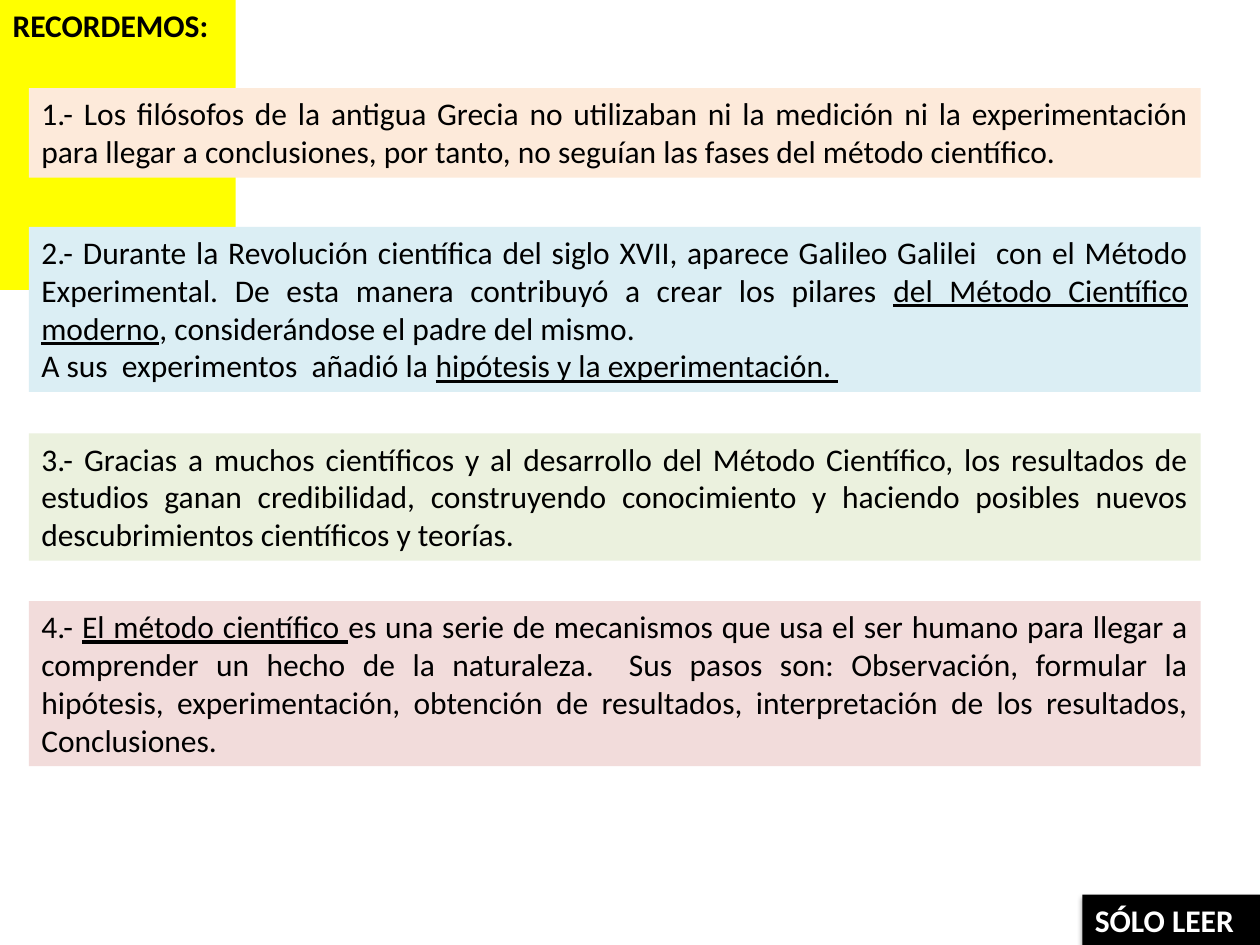
from lxml import etree
from pptx import Presentation
from pptx import util as u
from pptx.dml.color import RGBColor
from pptx.enum import shapes, text
from pptx.oxml.ns import qn

COLORS = {
    "peach": "FDEADA",
    "blue": "DBEEF4",
    "green": "EBF1DE",
    "pink": "F2DCDB",
    "yellow": "FFFF00",
    "black": "000000",
    "white": "FFFFFF",
}
UNDERLINE = "|"

POINTS = [
    (1.8 - 1.1, 0.71, "peach", [
        "1.- Los filósofos de la antigua Grecia no utilizaban ni la medición ni la "
        "experimentación para llegar a conclusiones, por tanto, no seguían las fases "
        "del método científico. "]),
    (1.8, 1.31, "blue", [
        "2.- Durante la Revolución científica del siglo XVII, aparece Galileo Galilei  "
        "con el Método Experimental. De esta manera contribuyó a crear los pilares "
        "|del Método Científico moderno|, considerándose el padre del mismo. ",
        "A sus  experimentos  añadió la |hipótesis y la experimentación. |"]),
    (3.44, 1.01, "green", [
        "3.- Gracias a muchos científicos y al desarrollo del Método Científico, los "
        "resultados de estudios ganan credibilidad, construyendo conocimiento y "
        "haciendo posibles nuevos descubrimientos científicos y teorías."]),
    (4.77, 1.31, "pink", [
        "4.- |El método científico |es una serie de mecanismos que usa el ser humano "
        "para llegar a comprender un hecho de la naturaleza.  Sus pasos son: "
        "Observación, formular la hipótesis, experimentación, obtención de resultados, "
        "interpretación de los resultados, Conclusiones."]),
]


def rgb(name):
    return RGBColor.from_string(COLORS[name])


def add_rect(s, box):
    return s.shapes.add_shape(shapes.MSO_SHAPE.RECTANGLE, *map(u.Inches, box))


def fill_box(sp, fill, paragraphs, align, color="black", bold=False):
    sp.fill.solid()
    sp.fill.fore_color.rgb = rgb(fill)
    sp.line.fill.background()
    sp.shadow.inherit = False
    tf = sp.text_frame
    tf.word_wrap = True
    tf.auto_size = text.MSO_AUTO_SIZE.SHAPE_TO_FIT_TEXT
    tf.vertical_anchor = text.MSO_ANCHOR.TOP
    for i, line in enumerate(paragraphs):
        p = tf.add_paragraph() if i else tf.paragraphs[0]
        p.alignment = align
        for j, part in enumerate(line.split(UNDERLINE)):
            if not part:
                continue
            r = p.add_run()
            r.text = part
            r.font.name = "Calibri"
            r.font.size = u.Pt(18)
            r.font.bold = bold
            r.font.underline = j % 2 == 1
            r.font.color.rgb = rgb(color)


def add_title(s, box):
    sp = s.shapes.title
    sp.left, sp.top, sp.width, sp.height = map(u.Inches, box)
    fill_box(sp, "yellow", ["RECORDEMOS:"], text.PP_ALIGN.LEFT, bold=True)


def add_point(s, box, fill, paragraphs):
    fill_box(add_rect(s, box), fill, paragraphs, text.PP_ALIGN.JUSTIFY)


def add_reading_tag(s, box):
    sp = add_rect(s, box)
    fill_box(sp, "black", ["SÓLO LEER"], text.PP_ALIGN.LEFT, "white", True)
    effects = sp.element.spPr.find(qn("a:effectLst"))
    shadow = etree.SubElement(effects, qn("a:outerShdw"), blurRad=str(u.Pt(3.1)),
                              dist=str(u.Pt(1.8)), dir="5400000", rotWithShape="0")
    clr = etree.SubElement(shadow, qn("a:srgbClr"), val=COLORS["black"])
    etree.SubElement(clr, qn("a:alpha"), val="35000")


def main():
    prs = Presentation()
    prs.slide_width, prs.slide_height = u.Inches(10), u.Inches(7.5)
    s = prs.slides.add_slide(prs.slide_layouts[5])
    for top, height, fill, paragraphs in POINTS:
        add_point(s, (0.23, top, 9.3, height), fill, paragraphs)
    add_title(s, (0, 0, 1.87, 0.4))
    add_reading_tag(s, (8.59, 7.1, 1.41, 0.4))
    prs.save("out.pptx")


if __name__ == "__main__":
    main()
